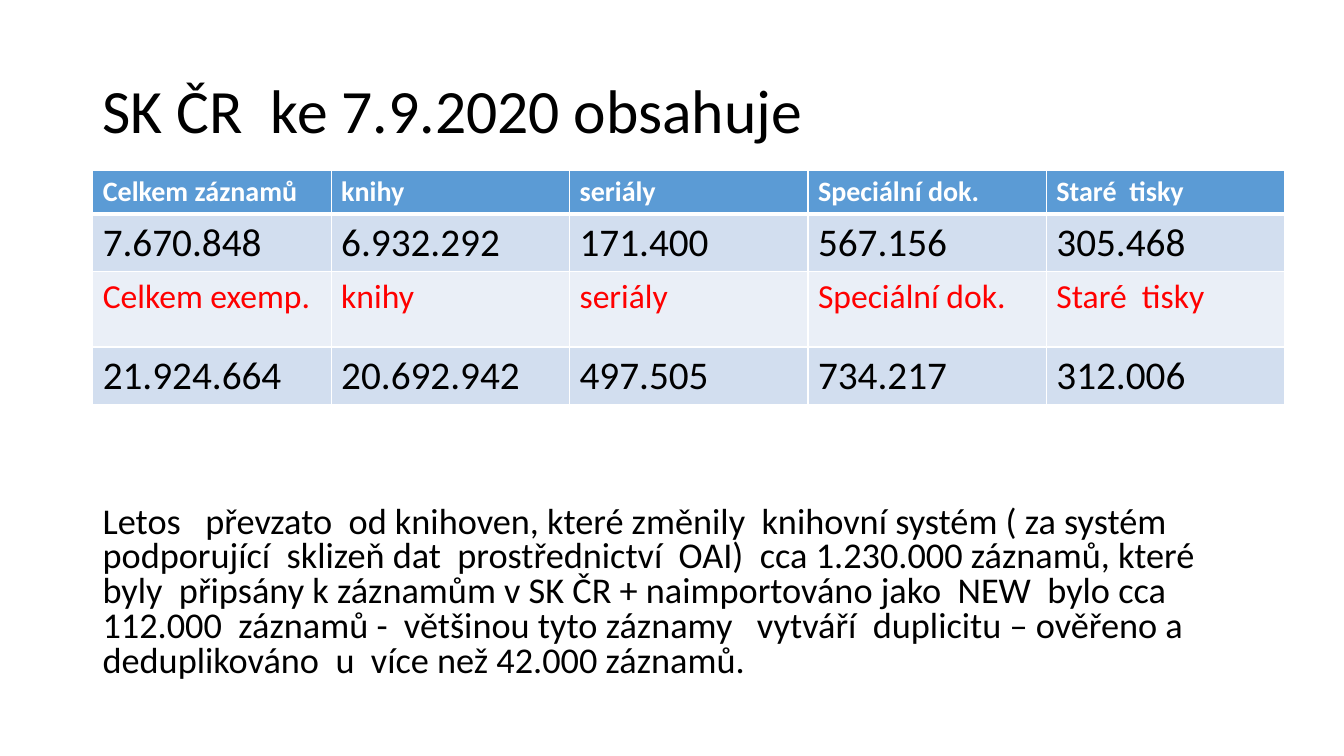
from dataclasses import dataclass

from lxml import etree
from pptx import Presentation
from pptx import util as u
from pptx.dml.color import RGBColor
from pptx.enum import text
from pptx.oxml.ns import qn


@dataclass(frozen=True)
class Theme:
    font: str = "Calibri"
    black: str = "000000"
    white: str = "FFFFFF"
    red: str = "FF0000"
    header: str = "5B9BD5"
    band_dark: str = "D2DEEF"
    band_light: str = "EAEFF7"
    title_size: float = 44
    body_size: float = 25.9
    header_size: float = 20
    label_size: float = 24
    value_size: float = 28
    thin: float = 1
    thick: float = 3


THEME = Theme()


def write(tf, content, size, color, bold=False, spacing=None):
    """Put one formatted paragraph into a text frame."""
    p = tf.paragraphs[0]
    p.alignment = text.PP_ALIGN.LEFT
    if spacing:
        p.line_spacing = spacing
    r = p.add_run()
    r.text = content
    r.font.name, r.font.size, r.font.bold = THEME.font, u.Pt(size), bold
    r.font.color.rgb = RGBColor.from_string(color)


def add_border(cell, side, width, color):
    ln = etree.SubElement(cell._tc.get_or_add_tcPr(), qn(f"a:ln{side}"), w=str(u.Pt(width)))
    fill = etree.SubElement(ln, qn("a:solidFill"))
    etree.SubElement(fill, qn("a:srgbClr"), val=color)


class SlideBuilder:
    """Places elements by shares of the slide's width and height."""

    def __init__(self, prs, theme):
        self.theme = theme
        self.width, self.height = prs.slide_width, prs.slide_height
        self.slide = prs.slides.add_slide(prs.slide_layouts[6])

    def x(self, share):
        return round(self.width * share)

    def y(self, share):
        return round(self.height * share)

    def text_box(self, box, content, anchor=text.MSO_ANCHOR.TOP, **style):
        left, top, width, height = box
        sp = self.slide.shapes.add_textbox(self.x(left), self.y(top), self.x(width), self.y(height))
        tf = sp.text_frame
        tf.word_wrap = True
        tf.vertical_anchor = anchor
        write(tf, content, **style)

    def table(self, left, top, width, rows):
        """Each row is (height share, fill, text style, cell texts)."""
        t = self.theme
        n_cols = len(rows[0][3])
        heights = [self.y(row[0]) for row in rows]
        frame = self.slide.shapes.add_table(
            len(rows), n_cols, self.x(left), self.y(top), self.x(width), sum(heights))
        table = frame.table
        table.horz_banding = False
        for col in table.columns:
            col.width = self.x(width / n_cols)
        for i, (_, fill, style, labels) in enumerate(rows):
            table.rows[i].height = heights[i]
            # The line below the header is thicker than the others
            lines = {"L": t.thin, "R": t.thin,
                     "T": t.thick if i == 1 else t.thin,
                     "B": t.thick if i == 0 else t.thin}
            for j, label in enumerate(labels):
                cell = table.cell(i, j)
                for side, line_width in lines.items():
                    add_border(cell, side, line_width, t.white)
                cell.fill.solid()
                cell.fill.fore_color.rgb = RGBColor.from_string(fill)
                write(cell.text_frame, label, **style)


def main():
    prs = Presentation()
    prs.slide_width, prs.slide_height = u.Inches(13.33), u.Inches(7.5)
    t = THEME
    s = SlideBuilder(prs, t)
    left, text_width, table_width = 0.069, 0.863, 0.887

    # Title
    s.text_box((left, 0.053, text_width, 0.193), "SK ČR  ke 7.9.2020 obsahuje",
               anchor=text.MSO_ANCHOR.MIDDLE, size=t.title_size, color=t.black, spacing=0.9)

    # Closing remark
    s.text_box(
        (left, 0.663, text_width, 0.29),
        "Letos   převzato  od knihoven, které změnily  knihovní systém ( za systém "
        "podporující  sklizeň dat  prostřednictví  OAI)  cca 1.230.000 záznamů, které "
        "byly  připsány k záznamům v SK ČR + naimportováno jako  NEW  bylo cca "
        "112.000  záznamů -  většinou tyto záznamy   vytváří  duplicitu – ověřeno a "
        "deduplikováno  u  více než 42.000 záznamů.",
        size=t.body_size, color=t.black, spacing=0.8)

    # Counts of records and of copies
    kinds = ["knihy", "seriály", "Speciální dok.", "Staré  tisky"]
    header = dict(size=t.header_size, color=t.white, bold=True)
    label = dict(size=t.label_size, color=t.red)
    value = dict(size=t.value_size, color=t.black)
    s.table(left, 0.225, table_width, [
        (0.058, t.header, header, ["Celkem záznamů", *kinds]),
        (0.076, t.band_dark, value,
         ["7.670.848", "6.932.292", "171.400", "567.156", "305.468"]),
        (0.1, t.band_light, label, ["Celkem exemp.", *kinds]),
        (0.076, t.band_dark, value,
         ["21.924.664", "20.692.942", "497.505", "734.217", "312.006"]),
    ])

    prs.save("out.pptx")


if __name__ == "__main__":
    main()
